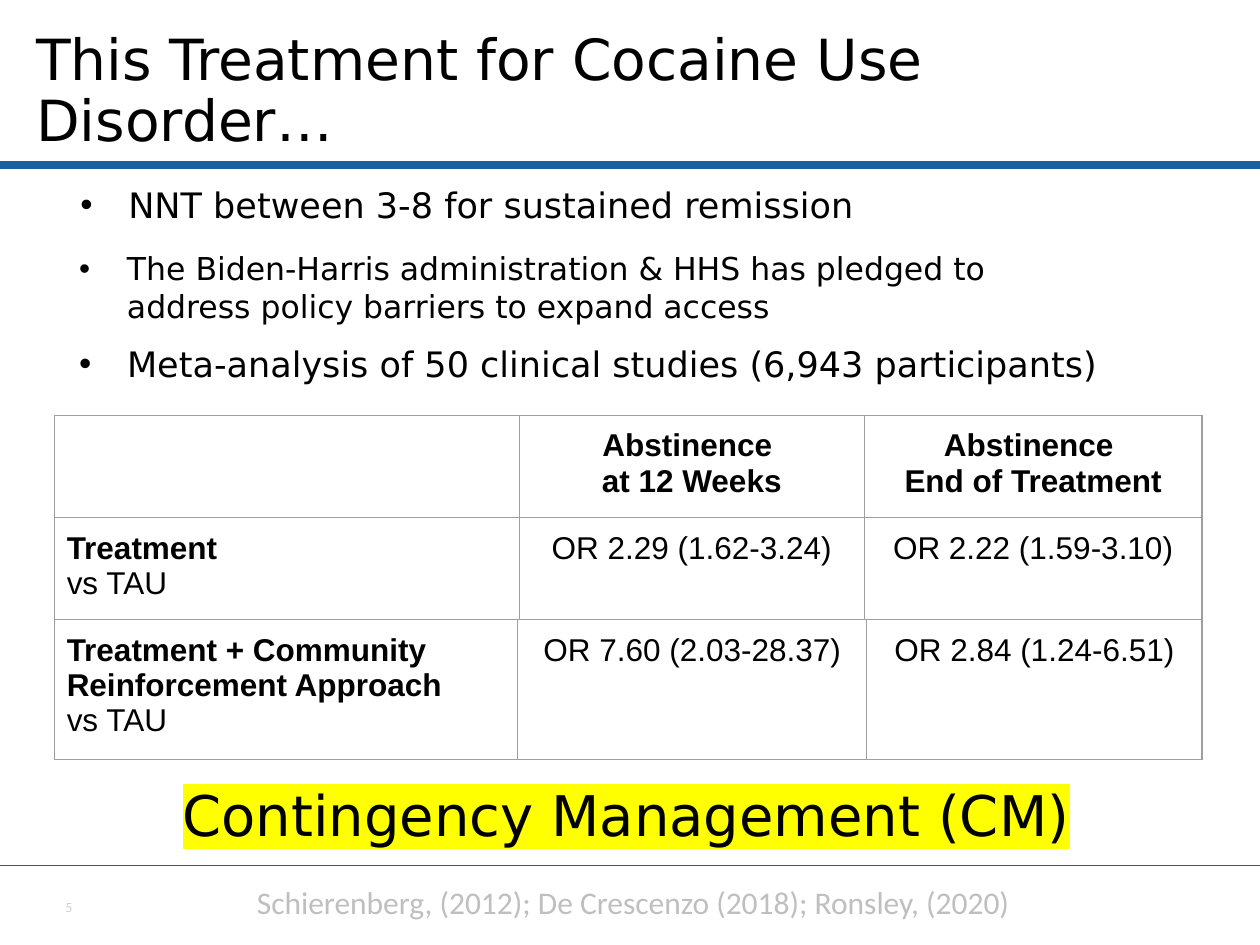
"""Build the slide on evidence for a cocaine use disorder treatment."""
from lxml.etree import SubElement
from pptx import Presentation
from pptx.dml.color import RGBColor
from pptx.enum.shapes import MSO_CONNECTOR as Connector
from pptx.enum.text import MSO_ANCHOR as Anchor, PP_ALIGN as Align
from pptx.oxml import parse_xml
from pptx.oxml.ns import nsdecls, qn
from pptx.util import Inches, Pt

SANS = "DejaVu Sans"
BLACK, BLUE, GRAY, YELLOW = "000000", "1C619E", "9E9E9E", "FFFF00"
RULES = [(6.87, 1), (1.31, 5)]
TITLE = "This Treatment for Cocaine Use Disorder…"
ANSWER = "Contingency Management (CM)"
SOURCES = "Schierenberg, (2012); De Crescenzo (2018); Ronsley, (2020)"
BULLETS = [
    ("NNT between 3-8 for sustained remission", (0.54, 1.41, 8.73, 0.44), 20),
    ("The Biden-Harris administration & HHS has pledged to address policy "
     "barriers to expand access", (0.53, 1.93, 8.26, 0.71), 18),
    ("Meta-analysis of 50 clinical studies (6,943 participants)",
     (0.53, 2.67, 8.49, 0.44), 20),
]
TABLES = [
    (3.3, 0.81, [3.69, 2.74, 2.68], [
        ["", "Abstinence \nat 12 Weeks", "Abstinence \nEnd of Treatment"],
        ["Treatment\nvs TAU", "OR 2.29 (1.62-3.24)", "OR 2.22 (1.59-3.10)"],
    ]),
    (4.92, 1.11, [3.68, 2.77, 2.66], [
        ["Treatment + Community Reinforcement Approach\nvs TAU",
         "OR 7.60 (2.03-28.37)", "OR 2.84 (1.24-6.51)"],
    ]),
]
PLAIN_STARTS = ("vs ", "OR ")


def color(value):
    return RGBColor.from_string(value)


def style(para, size, face, ink, bold=False):
    for span in para.runs:
        span.font.size = Pt(size)
        span.font.name = face
        span.font.bold = bold
        span.font.color.rgb = color(ink)


def add_text(page, text, place, size, face=SANS, ink=BLACK, anchor=Anchor.TOP):
    box = page.shapes.add_textbox(*map(Inches, place))
    frame = box.text_frame
    frame.word_wrap = True
    frame.vertical_anchor = anchor
    frame.text = text
    para = frame.paragraphs[0]
    style(para, size, face, ink)
    return para


def add_heading(page, text, place, size):
    para = add_text(page, text, place, size, anchor=Anchor.BOTTOM)
    para.line_spacing = 0.9
    return para


def add_bullet(para):
    props = para._p.get_or_add_pPr()
    props.set("marL", str(Inches(0.38)))
    props.set("indent", str(-Inches(0.38)))
    SubElement(props, qn("a:buFont")).set("typeface", "Arial")
    SubElement(props, qn("a:buChar")).set("char", "•")


def highlight(para, ink):
    mark = parse_xml(f'<a:highlight {nsdecls("a")}><a:srgbClr val="{ink}"/></a:highlight>')
    for span in para.runs:
        span._r.rPr.find(qn("a:solidFill")).addnext(mark)


def add_rule(page, top, weight):
    rule = page.shapes.add_connector(
        Connector.STRAIGHT, 0, Inches(top), Inches(10), Inches(top))
    rule.line.color.rgb = color(BLUE)
    rule.line.width = Pt(weight)
    SubElement(rule._element.spPr, qn("a:effectLst"))


def add_borders(cell, ink, weight):
    props = cell._tc.get_or_add_tcPr()
    for index, side in enumerate("LRTB"):
        props.insert(index, parse_xml(
            f'<a:ln{side} {nsdecls("a")} w="{Pt(weight)}"><a:solidFill>'
            f'<a:srgbClr val="{ink}"/></a:solidFill></a:ln{side}>'))


def fill_cell(cell, text, align):
    cell.margin_left = cell.margin_right = Inches(0.1)
    cell.margin_top = cell.margin_bottom = Inches(0.1)
    cell.fill.background()
    add_borders(cell, GRAY, 0.75)
    cell.text_frame.text = text
    for para in cell.text_frame.paragraphs:
        para.alignment = align
        style(para, 18, "Arial", BLACK, not para.text.startswith(PLAIN_STARTS))


def add_results(page, top, row_height, widths, rows):
    frame = page.shapes.add_table(
        len(rows), len(widths), Inches(0.43), Inches(top),
        Inches(sum(widths)), Inches(row_height * len(rows)))
    table = frame.table
    table.first_row = table.horz_banding = False
    for column, width in zip(table.columns, widths):
        column.width = Inches(width)
    for r, row in enumerate(rows):
        table.rows[r].height = Inches(row_height)
        for c, text in enumerate(row):
            fill_cell(table.cell(r, c), text, Align.CENTER if c else Align.LEFT)


def main():
    deck = Presentation()
    deck.slide_width, deck.slide_height = Inches(10), Inches(7.5)
    page = deck.slides.add_slide(deck.slide_layouts[6])
    for top, weight in RULES:
        add_rule(page, top, weight)
    add_heading(page, TITLE, (0.19, 0.28, 9.6, 0.99), 32.4)
    add_text(page, "5", (0.42, 7.08, 0.36, 0.4), 8, "Calibri", "D0CECE")
    add_text(page, SOURCES, (1.94, 6.96, 6.68, 0.4), 18, "Calibri", "BFBFBF")
    for text, place, size in BULLETS:
        add_bullet(add_text(page, text, place, size))
    for top, row_height, widths, rows in TABLES:
        add_results(page, top, row_height, widths, rows)
    highlight(add_heading(page, ANSWER, (1.35, 5.79, 7.75, 0.99), 32), YELLOW)
    deck.save("out.pptx")


if __name__ == "__main__":
    main()
